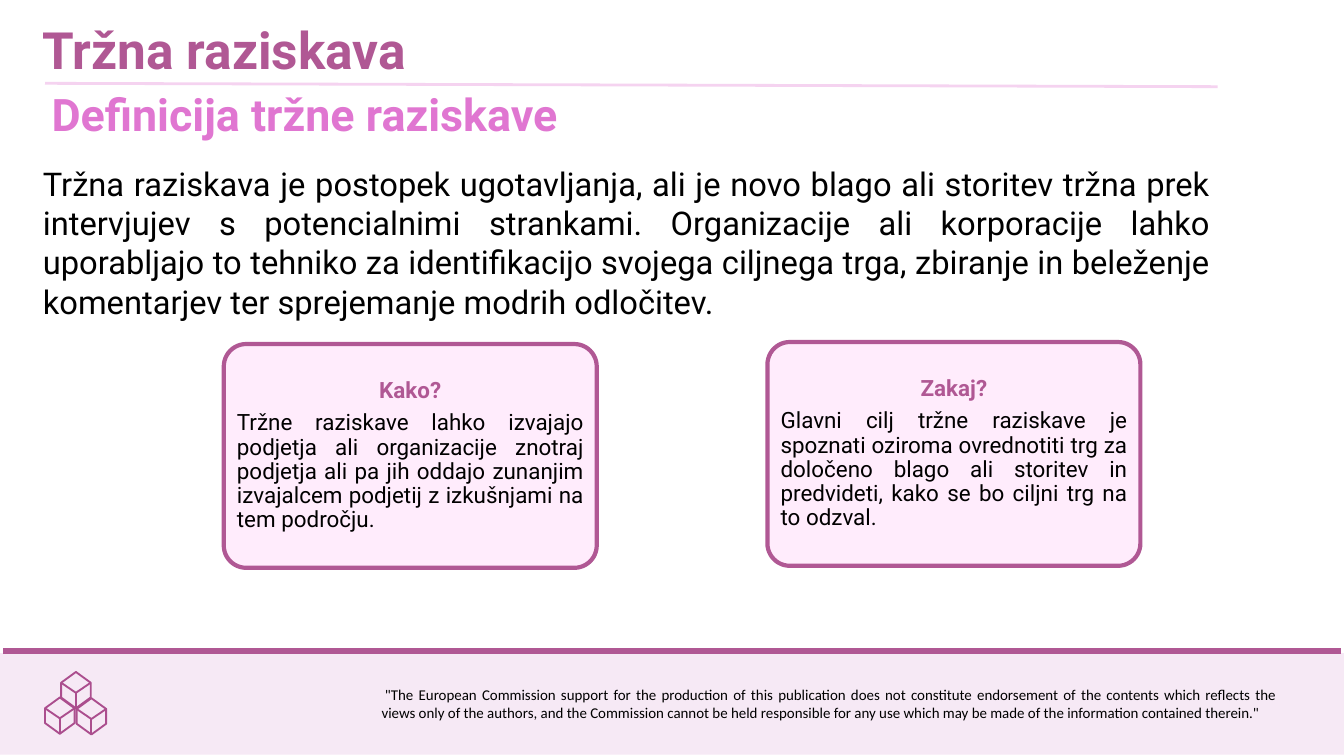
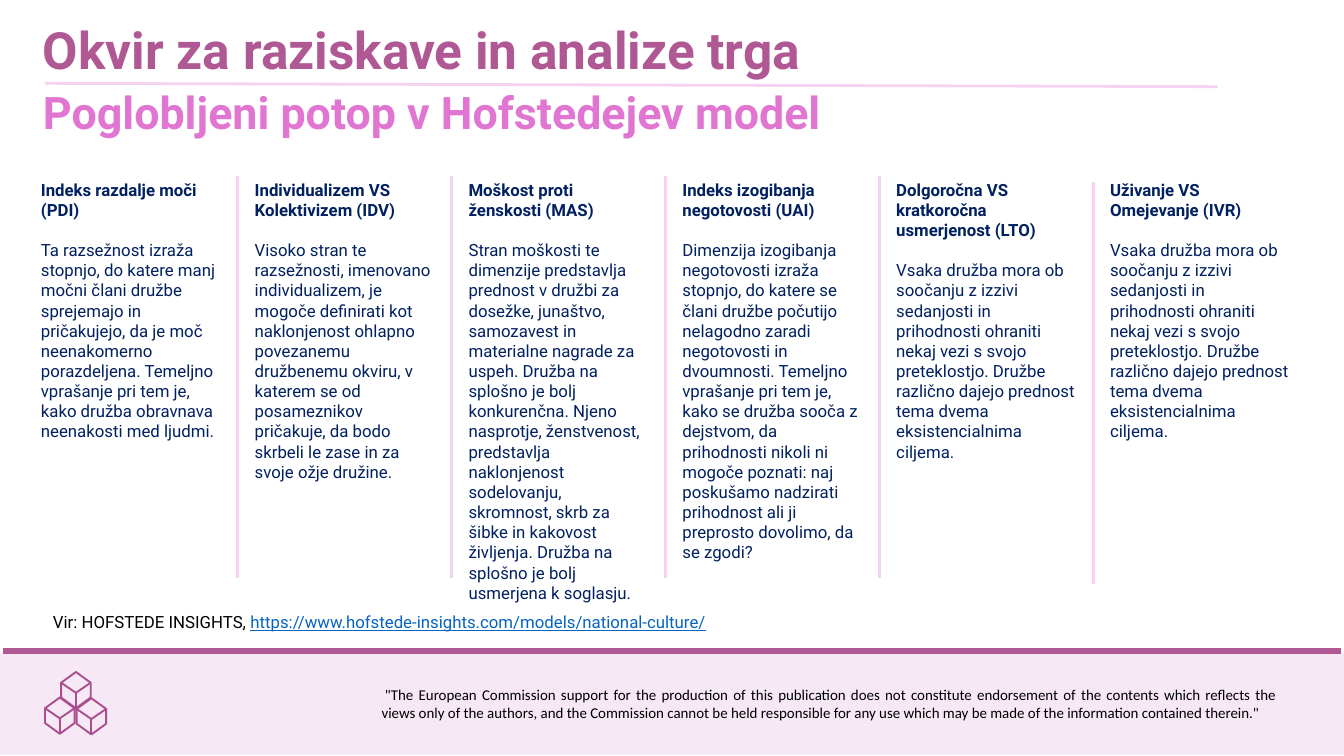
"""Builds two slides on market research."""
from lxml import etree
from pptx import Presentation
from pptx import util as u
from pptx.dml.color import RGBColor
from pptx.enum import shapes, text
from pptx.oxml.ns import qn

PLUM, PINK, PALE, NAVY = "B05894", "E076D1", "F5D3F0", "002060"
BAND, CARD, ICON, BLACK, LINK = "F6E9F5", "FFECFC", "AB4E8E", "000000", "0563C1"
LEFT, CENTER, JUSTIFY = text.PP_ALIGN.LEFT, text.PP_ALIGN.CENTER, text.PP_ALIGN.JUSTIFY

DISCLAIMER = (
    '"The European Commission support for the production of this publication does not '
    "constitute endorsement of the contents which reflects the views only of the authors, "
    "and the Commission cannot be held responsible for any use which may be made of the "
    'information contained therein."')
DEFINITION = (
    "Tržna raziskava je postopek ugotavljanja, ali je novo blago ali storitev tržna prek "
    "intervjujev s potencialnimi strankami. Organizacije ali korporacije lahko uporabljajo "
    "to tehniko za identifikacijo svojega ciljnega trga, zbiranje in beleženje komentarjev "
    "ter sprejemanje modrih odločitev.")
CARDS = [
    (3.33, 5.12, "Kako?",
     "Tržne raziskave lahko izvajajo podjetja ali organizacije znotraj podjetja ali pa jih "
     "oddajo zunanjim izvajalcem podjetij z izkušnjami na tem področju."),
    (11.42, 5.09, "Zakaj?",
     "Glavni cilj tržne raziskave je spoznati oziroma ovrednotiti trg za določeno blago ali "
     "storitev in predvideti, kako se bo ciljni trg na to odzval."),
]
ORIENTATION = (
    "Vsaka družba mora ob soočanju z izzivi sedanjosti in prihodnosti ohraniti nekaj vezi s "
    "svojo preteklostjo. Družbe različno dajejo prednost tema dvema eksistencialnima ciljema.")
DIMENSIONS = [
    ("Indeks razdalje moči (PDI)", 4.04,
     "Ta razsežnost izraža stopnjo, do katere manj močni člani družbe sprejemajo in "
     "pričakujejo, da je moč neenakomerno porazdeljena. Temeljno vprašanje pri tem je, kako "
     "družba obravnava neenakosti med ljudmi."),
    ("Individualizem VS Kolektivizem (IDV)", 4.64,
     "Visoko stran te razsežnosti, imenovano individualizem, je mogoče definirati kot "
     "naklonjenost ohlapno povezanemu družbenemu okviru, v katerem se od posameznikov "
     "pričakuje, da bodo skrbeli le zase in za svoje ožje družine."),
    ("Moškost proti ženskosti (MAS)", 6.77,
     "Stran moškosti te dimenzije predstavlja prednost v družbi za dosežke, junaštvo, "
     "samozavest in materialne nagrade za uspeh. Družba na splošno je bolj konkurenčna. "
     "Njeno nasprotje, ženstvenost, predstavlja naklonjenost sodelovanju, skromnost, skrb za "
     "šibke in kakovost življenja. Družba na splošno je bolj usmerjena k soglasju."),
    ("Indeks izogibanja negotovosti (UAI)", 5.86,
     "Dimenzija izogibanja negotovosti izraža stopnjo, do katere se člani družbe počutijo "
     "nelagodno zaradi negotovosti in dvoumnosti. Temeljno vprašanje pri tem je, kako se "
     "družba sooča z dejstvom, da prihodnosti nikoli ni mogoče poznati: naj poskušamo "
     "nadzirati prihodnost ali ji preprosto dovolimo, da se zgodi?"),
    ("Dolgoročna VS kratkoročna usmerjenost (LTO)", 4.34, ORIENTATION),
    ("Uživanje VS Omejevanje (IVR)", 4.04, ORIENTATION),
]


def rgb(color):
    """Turn a hex string into a colour."""
    return RGBColor.from_string(color)


def add_run(p, content, size=18, color=BLACK, bold=False, underline=False, font="Roboto"):
    """Add formatted text to a paragraph."""
    r = p.add_run()
    r.text = content
    r.font.size, r.font.name = u.Pt(size), font
    r.font.bold, r.font.underline = bold, underline
    r.font.color.rgb = rgb(color)


class Deck:
    """Holds the presentation, its style and the current slide."""

    def __init__(self):
        """Start an empty deck."""
        self.prs = Presentation()
        self.prs.slide_width, self.prs.slide_height = u.Inches(20), u.Inches(11.25)
        self.s = None

    def slide(self, title, subtitle, sub_x, sub_y):
        """Add a slide with its footer and headings."""
        self.s = self.prs.slides.add_slide(self.prs.slide_layouts[6])
        self.footer()
        add_run(self.box(0.54, 0.22, 16.5, 1.03), title, size=55, color=PLUM, bold=True)
        self.line(0.67, 1.24, 18.12, 1.29)
        add_run(self.box(sub_x, sub_y, 14.87, 0.91), subtitle, size=48, color=PINK, bold=True)

    def footer(self):
        """Draw the bottom band, its icon and the disclaimer."""
        self.shape(shapes.MSO_SHAPE.RECTANGLE, 0, 9.72, 20, 1.51, BAND)
        self.line(0.05, 9.69, 19.95, 9.69, PLUM, 6.75)
        for x, y in [(0.89, 10.65), (1.13, 10.27), (1.36, 10.66)]:
            self.cube(x, y)
        p = self.box(5.58, 10.15, 13.52, 0.64, JUSTIFY)
        p._p.get_or_add_pPr().set("indent", str(u.Inches(0.05)))
        add_run(p, DISCLAIMER, size=16, font="Calibri")

    def cube(self, x, y):
        """Draw an outlined cube centred on a point."""
        x, y, w, h, rise = u.Inches(x), u.Inches(y), u.Inches(0.22), u.Inches(0.27), u.Inches(0.16)
        shoulder, foot, middle = y - h + rise, y + h - rise, y + u.Inches(0.04)
        fb = self.s.shapes.build_freeform(x, y - h)
        fb.add_line_segments([(x + w, shoulder), (x + w, foot), (x, y + h),
                              (x - w, foot), (x - w, shoulder)], close=True)
        fb.move_to(x - w, shoulder)
        fb.add_line_segments([(x, middle), (x + w, shoulder)], close=False)
        fb.move_to(x, middle)
        fb.add_line_segments([(x, y + h)], close=False)
        self.paint(fb.convert_to_shape(), None, ICON, 2)

    def paint(self, sp, fill, line=None, width=0):
        """Set the fill and outline of a shape."""
        sp.shadow.inherit = False
        if fill:
            sp.fill.solid()
            sp.fill.fore_color.rgb = rgb(fill)
        else:
            sp.fill.background()
        if line:
            sp.line.color.rgb, sp.line.width = rgb(line), u.Pt(width)
        else:
            sp.line.fill.background()

    def shape(self, kind, x, y, w, h, fill, line=None, width=0):
        """Add a preset shape."""
        sp = self.s.shapes.add_shape(kind, u.Inches(x), u.Inches(y), u.Inches(w), u.Inches(h))
        self.paint(sp, fill, line, width)
        return sp

    def line(self, x1, y1, x2, y2, color=PALE, width=3):
        """Add a straight line."""
        sp = self.s.shapes.add_connector(shapes.MSO_CONNECTOR.STRAIGHT, u.Inches(x1),
                                         u.Inches(y1), u.Inches(x2), u.Inches(y2))
        sp.line.color.rgb, sp.line.width = rgb(color), u.Pt(width)
        etree.SubElement(sp._element.spPr, qn("a:effectLst"))

    def box(self, x, y, w, h, align=LEFT):
        """Add a text box and return its first paragraph."""
        sp = self.s.shapes.add_textbox(u.Inches(x), u.Inches(y), u.Inches(w), u.Inches(h))
        tf = sp.text_frame
        tf.word_wrap, tf.auto_size = True, text.MSO_AUTO_SIZE.SHAPE_TO_FIT_TEXT
        tf.paragraphs[0].alignment = align
        return tf.paragraphs[0]

    def card(self, x, y, heading, body):
        """Add a rounded card with a heading and body."""
        sp = self.shape(shapes.MSO_SHAPE.ROUNDED_RECTANGLE, x, y, 5.55, 3.33, CARD, PLUM, 4.5)
        sp.adjustments[0] = 0.1
        tf = sp.text_frame
        tf.word_wrap, tf.vertical_anchor = True, text.MSO_ANCHOR.MIDDLE
        tf.margin_left = tf.margin_right = tf.margin_top = tf.margin_bottom = u.Inches(0.1)
        head, para = tf.paragraphs[0], tf.add_paragraph()
        head.alignment, para.alignment = CENTER, JUSTIFY
        for p in (head, para):
            p.line_spacing, p.space_after = 0.9, u.Pt(8.4)
        add_run(head, heading, size=24, color=PLUM, bold=True)
        add_run(para, body, size=24)

    def column(self, x, y, h, heading, body):
        """Add a column with a bold heading and body."""
        head = self.box(x, y, 2.88, h)
        add_run(head, heading, color=NAVY, bold=True)
        p = head._parent.add_paragraph()
        p.space_before = u.Pt(21.5)
        add_run(p, body, color=NAVY)


def main():
    """Build and save the deck."""
    deck = Deck()

    deck.slide("Tržna raziskava", "Definicija tržne raziskave", 0.67, 1.24)
    add_run(deck.box(0.54, 2.39, 17.58, 2.46, JUSTIFY), DEFINITION, size=35)
    for card in CARDS:
        deck.card(*card)

    deck.slide("Okvir za raziskave in analize trga",
               "Poglobljeni potop v Hofstedejev model", 0.54, 1.21)
    first, last, top = 0.51, 16.42, 2.62
    pitch = (last - first) / (len(DIMENSIONS) - 1)
    for i, (heading, height, body) in enumerate(DIMENSIONS):
        deck.column(first + i * pitch, top, height, heading, body)
    for i, y in enumerate([top] * 4 + [2.71]):
        x = 3.54 + i * pitch
        deck.line(x, y, x, y + 5.98)
    p = deck.box(0.69, 9.05, 14.87, 0.4)
    add_run(p, "Vir: HOFSTEDE INSIGHTS, ")
    add_run(p, "https://www.hofstede-insights.com/models/national-culture/",
            color=LINK, underline=True)

    deck.prs.save("out.pptx")


if __name__ == "__main__":
    main()
